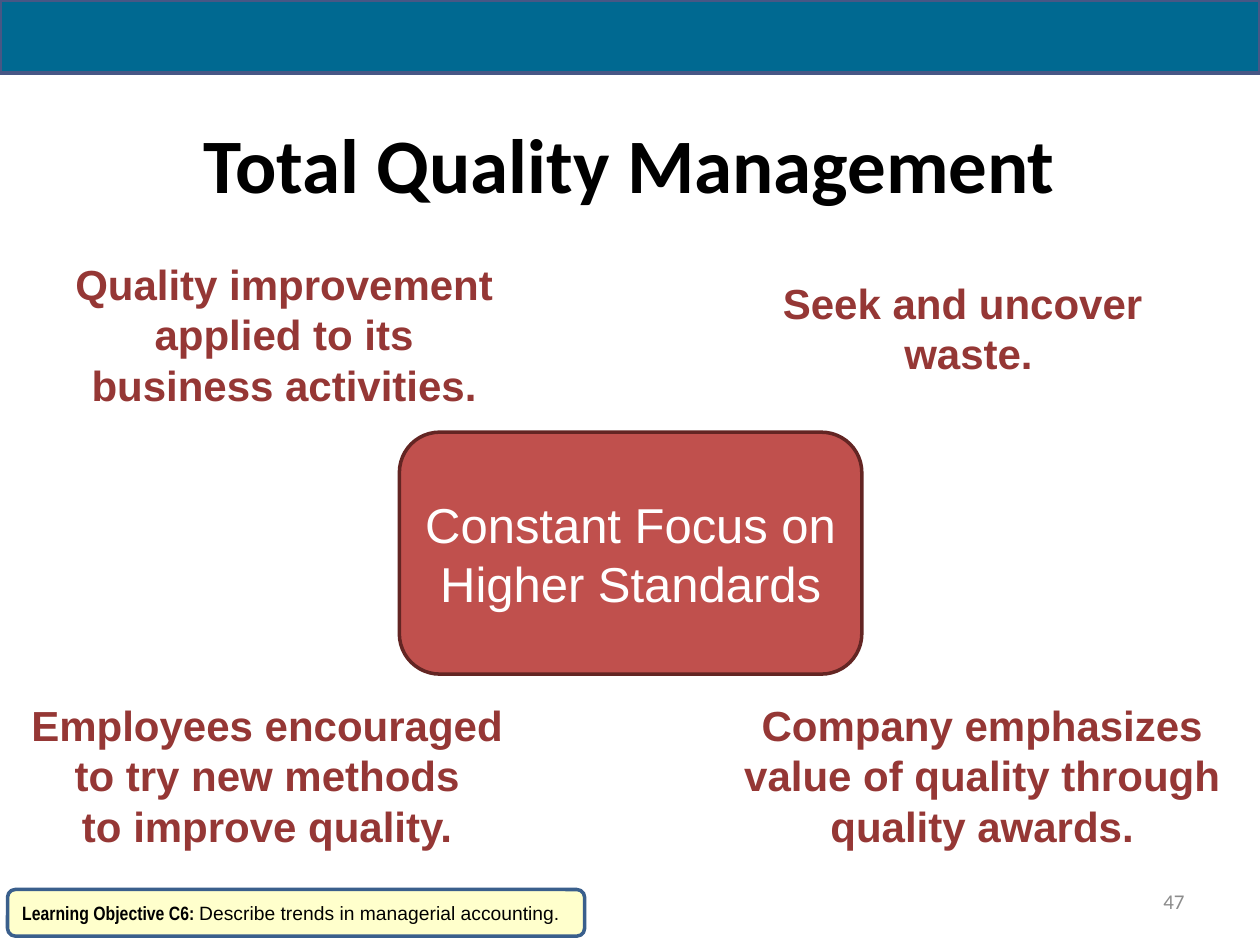
from pptx import Presentation
from pptx.dml.color import RGBColor
from pptx.enum.shapes import MSO_SHAPE
from pptx.enum.text import MSO_ANCHOR, PP_ALIGN
from pptx.util import Inches, Pt

BLACK = RGBColor(0x00, 0x00, 0x00)
WHITE = RGBColor(0xFF, 0xFF, 0xFF)
GRAY = RGBColor(0x8C, 0x8C, 0x8C)
MAROON = RGBColor(0x95, 0x37, 0x35)
RED = RGBColor(0xC0, 0x50, 0x4D)
DARK_RED = RGBColor(0x63, 0x25, 0x23)
TEAL = RGBColor(0x00, 0x69, 0x91)
INDIGO = RGBColor(0x47, 0x57, 0x85)
CREAM = RGBColor(0xFF, 0xFF, 0xCC)
BLUE = RGBColor(0x3A, 0x5F, 0x8C)


def add_text(para, text, size=24, font="Arial", color=BLACK, bold=False,
             align=PP_ALIGN.CENTER):
    """Append text to a paragraph; each newline becomes a line break."""
    para.alignment = align
    for number, line in enumerate(text.split("\n")):
        if number:
            para.add_line_break()
        span = para.add_run()
        span.text = line
        span.font.size = Pt(size)
        span.font.name = font
        span.font.color.rgb = color
        span.font.bold = bold


class SlideBuilder:
    def __init__(self, page):
        self.page = page

    def title(self, text, left, top, width, height):
        box = self.page.shapes.title
        box.left, box.top = Inches(left), Inches(top)
        box.width, box.height = Inches(width), Inches(height)
        frame = box.text_frame
        frame.vertical_anchor = MSO_ANCHOR.MIDDLE
        add_text(frame.paragraphs[0], text, size=44, font="Calibri", bold=True)

    def panel(self, kind, left, top, width, height, fill, line, line_width=2):
        box = self.page.shapes.add_shape(
            kind, Inches(left), Inches(top), Inches(width), Inches(height))
        box.shadow.inherit = False
        box.fill.solid()
        box.fill.fore_color.rgb = fill
        box.line.color.rgb = line
        box.line.width = Pt(line_width)
        box.text_frame.vertical_anchor = MSO_ANCHOR.MIDDLE
        return box.text_frame.paragraphs[0]

    def text_box(self, paragraphs, left, top, width, height, wrap=True,
                 anchor=MSO_ANCHOR.TOP, **style):
        box = self.page.shapes.add_textbox(
            Inches(left), Inches(top), Inches(width), Inches(height))
        frame = box.text_frame
        frame.word_wrap = wrap
        frame.vertical_anchor = anchor
        for number, text in enumerate(paragraphs):
            para = frame.add_paragraph() if number else frame.paragraphs[0]
            add_text(para, text, **style)


def main():
    deck = Presentation()
    deck.slide_width, deck.slide_height = Inches(10), Inches(7.5)
    builder = SlideBuilder(deck.slides.add_slide(deck.slide_layouts[5]))

    principles = [
        (["Quality improvement", "applied to its", "business activities."],
         0.48, 2, 3.55, 1.31, False),
        (["Seek and uncover", " waste."], 6.1, 2.15, 3.08, 0.91, False),
        (["Employees encouraged\nto try new methods\nto improve quality."],
         0.13, 5.5, 3.98, 1.31, True),
        (["Company emphasizes\nvalue of quality through\nquality awards."],
         5.79, 5.5, 4.01, 1.31, True),
    ]
    for principle in principles:
        builder.text_box(*principle, color=MAROON, bold=True)

    builder.title("Total Quality Management", 0.5, 0.83, 9, 0.92)

    focus = builder.panel(MSO_SHAPE.ROUNDED_RECTANGLE, 3.17, 3.43, 3.67, 1.92,
                          RED, DARK_RED)
    add_text(focus, "Constant Focus on Higher Standards", size=28, color=WHITE)

    builder.panel(MSO_SHAPE.RECTANGLE, 0, 0, 10, 0.58, TEAL, INDIGO, 2.25)

    builder.text_box(["47"], 7.17, 6.95, 2.33, 0.4, anchor=MSO_ANCHOR.MIDDLE,
                     size=12, font="Calibri", color=GRAY, align=PP_ALIGN.RIGHT)

    objective = builder.panel(MSO_SHAPE.ROUNDED_RECTANGLE, 0.06, 7.06, 4.58, 0.37,
                              CREAM, BLUE)
    add_text(objective, "Learning Objective C6: ", size=11, font="Arial Narrow",
             bold=True, align=PP_ALIGN.LEFT)
    add_text(objective, "Describe trends in managerial accounting.", size=11,
             align=PP_ALIGN.LEFT)

    deck.save("out.pptx")


if __name__ == "__main__":
    main()
